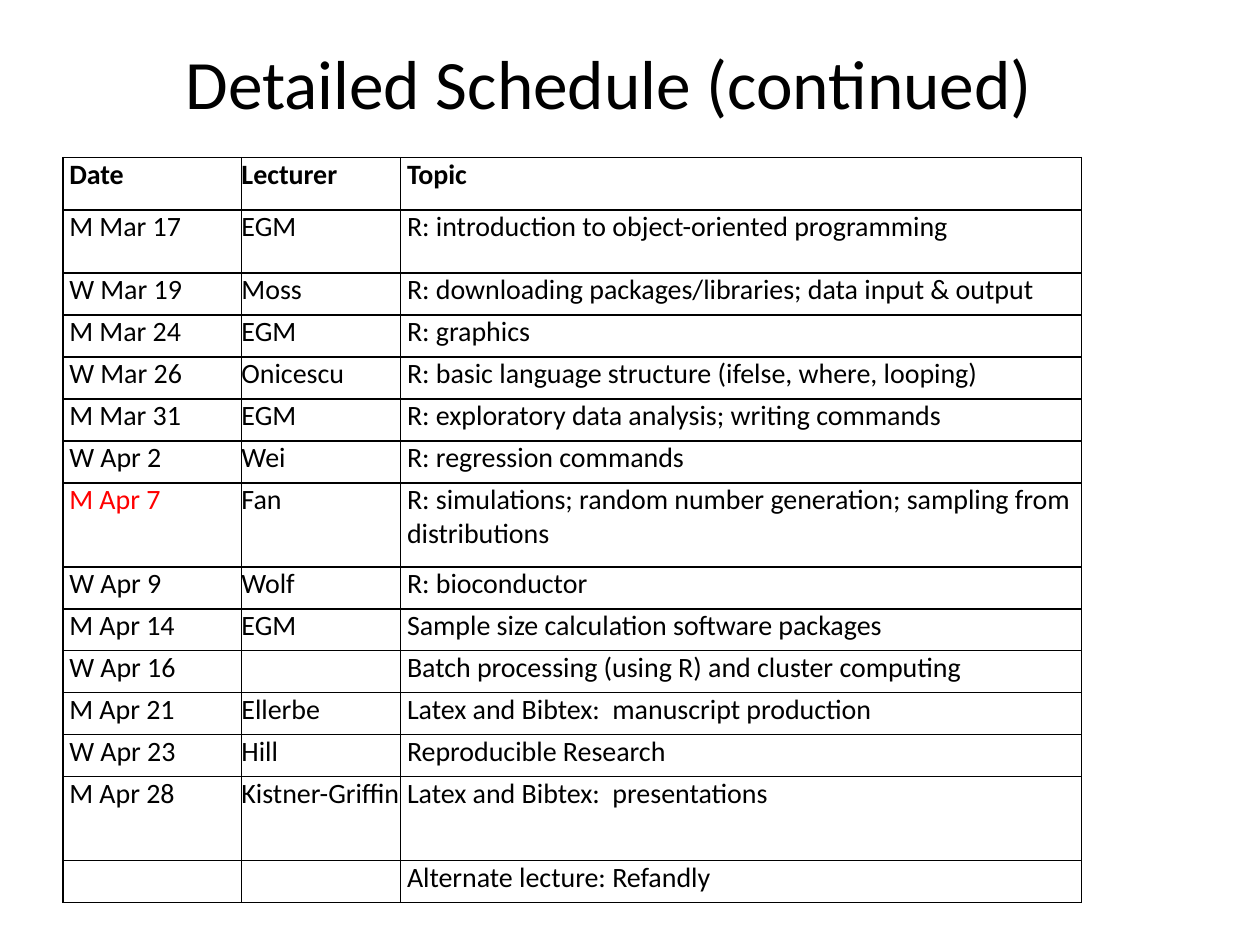
from typing import NamedTuple

from lxml.etree import SubElement
from pptx import Presentation
from pptx.dml.color import RGBColor
from pptx.enum.text import MSO_ANCHOR, PP_ALIGN
from pptx.oxml.ns import qn
from pptx.util import Pt

BLACK = RGBColor(0x00, 0x00, 0x00)
RED = RGBColor(0xFF, 0x00, 0x00)
WHITE = RGBColor(0xFF, 0xFF, 0xFF)

FONT = "Calibri"
COLUMN_WIDTHS = (102, 91, 389)
SIDE_MARGINS = (3.6, 0, 3.6)
LINE_HEIGHT = 24
BORDER_WIDTH = 1


class Lecture(NamedTuple):
    date: str
    lecturer: str
    topic: str
    height: float = LINE_HEIGHT
    date_color: RGBColor = BLACK
    bold: bool = False


SCHEDULE = [
    Lecture("Date", "Lecturer", "Topic", height=30, bold=True),
    Lecture("M Mar 17", "EGM", "R: introduction to object-oriented programming", height=36),
    Lecture("W Mar 19", "Moss", "R: downloading packages/libraries; data input & output"),
    Lecture("M Mar 24", "EGM", "R: graphics"),
    Lecture("W Mar 26", "Onicescu", "R: basic language structure (ifelse, where, looping)"),
    Lecture("M Mar 31", "EGM", "R: exploratory data analysis; writing commands"),
    Lecture("W Apr 2", "Wei", "R: regression commands"),
    Lecture("M Apr 7", "Fan",
            "R: simulations; random number generation; sampling from distributions",
            height=2 * LINE_HEIGHT, date_color=RED),
    Lecture("W Apr 9", "Wolf", "R: bioconductor"),
    Lecture("M Apr 14", "EGM", "Sample size calculation software packages"),
    Lecture("W Apr 16", "", "Batch processing (using R) and cluster computing"),
    Lecture("M Apr 21", "Ellerbe", "Latex and Bibtex:  manuscript production"),
    Lecture("W Apr 23", "Hill", "Reproducible Research"),
    Lecture("M Apr 28", "Kistner-Griffin", "Latex and Bibtex:  presentations",
            height=2 * LINE_HEIGHT),
    Lecture("", "", "Alternate lecture: Refandly"),
]


def write(frame, text: str, *, size: float = 16, color: RGBColor = BLACK,
          bold: bool = False, align: PP_ALIGN = PP_ALIGN.LEFT) -> None:
    """Fill a text frame with one formatted paragraph."""
    paragraph = frame.paragraphs[0]
    paragraph.alignment = align
    if not text:
        return
    run = paragraph.add_run()
    run.text = text
    run.font.name = FONT
    run.font.size = Pt(size)
    run.font.bold = bold
    run.font.color.rgb = color


def style_cell(cell, side_margin: float) -> None:
    """Set margins, thin black borders and a white fill."""
    cell.margin_left = cell.margin_right = Pt(side_margin)
    cell.margin_top = cell.margin_bottom = 0
    properties = cell._tc.get_or_add_tcPr()
    for edge in ("a:lnL", "a:lnR", "a:lnT", "a:lnB"):
        line = SubElement(properties, qn(edge), w=str(Pt(BORDER_WIDTH)))
        fill = SubElement(line, qn("a:solidFill"))
        SubElement(fill, qn("a:srgbClr"), val=str(BLACK))
    cell.fill.solid()
    cell.fill.fore_color.rgb = WHITE


def add_title(slide, text: str) -> None:
    frame = slide.shapes.add_textbox(Pt(36), Pt(21.6), Pt(624), Pt(50.4)).text_frame
    frame.word_wrap = True
    frame.vertical_anchor = MSO_ANCHOR.MIDDLE
    write(frame, text, size=39.6, align=PP_ALIGN.CENTER)


def add_schedule(slide, lectures: list[Lecture]) -> None:
    table = slide.shapes.add_table(
        len(lectures), len(COLUMN_WIDTHS), Pt(36), Pt(90),
        Pt(sum(COLUMN_WIDTHS)), Pt(sum(lecture.height for lecture in lectures)),
    ).table
    table.first_row = table.horz_banding = False
    for column, width in zip(table.columns, COLUMN_WIDTHS):
        column.width = Pt(width)
    for row, lecture in zip(table.rows, lectures):
        row.height = Pt(lecture.height)
        entries = (
            (lecture.date, lecture.date_color),
            (lecture.lecturer, BLACK),
            (lecture.topic, BLACK),
        )
        for cell, (text, color), margin in zip(row.cells, entries, SIDE_MARGINS):
            style_cell(cell, margin)
            write(cell.text_frame, text, color=color, bold=lecture.bold)


def main() -> None:
    presentation = Presentation()
    presentation.slide_width, presentation.slide_height = Pt(720), Pt(540)
    slide = presentation.slides.add_slide(presentation.slide_layouts[6])
    add_title(slide, "Detailed Schedule (continued)")
    add_schedule(slide, SCHEDULE)
    presentation.save("out.pptx")


if __name__ == "__main__":
    main()
